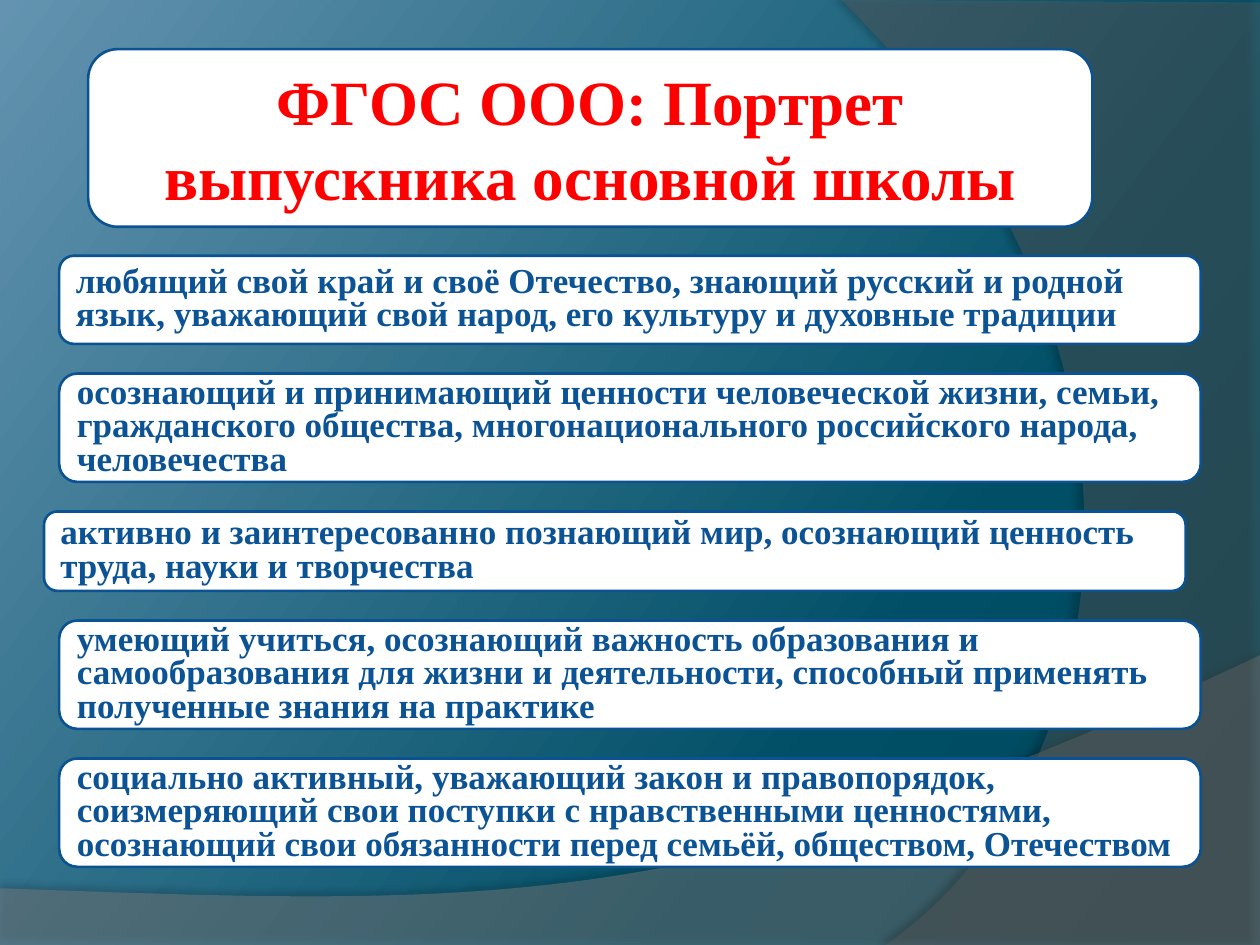
import copy

import lxml.etree
import pptx
import pptx.dml.color
import pptx.enum.shapes
import pptx.enum.text
import pptx.oxml.ns
import pptx.util

Inches = pptx.util.Inches
HUES = {
    "deep": "004355", "teal": "004F66", "sky": "6393B0",
    "wave": "7F7F7F", "arc": "5E5E5E", "shade": "000000",
    "card": "FFFFFF", "edge": "0B5292", "title": "FF0000", "body": "0B5394",
}
TRAITS = [
    (0.47, 0.7, "любящий свой край и своё Отечество, знающий русский и родной язык, "
     "уважающий свой народ, его культуру и духовные традиции"),
    (0.47, 0.86, "осознающий и принимающий ценности человеческой жизни, семьи, "
     "гражданского общества, многонационального российского народа, человечества"),
    (0.35, 0.63, "активно и заинтересованно познающий мир, осознающий ценность труда, "
     "науки и творчества"),
    (0.47, 0.86, "умеющий учиться, осознающий важность образования и самообразования "
     "для жизни и деятельности, способный применять полученные знания на практике"),
    (0.47, 0.86, "социально активный, уважающий закон и правопорядок, соизмеряющий свои "
     "поступки с нравственными ценностями, осознающий свои обязанности перед семьёй, "
     "обществом, Отечеством"),
]
TOP, END = 2.03, 6.88


def rgb(name):
    return pptx.dml.color.RGBColor.from_string(HUES[name])


def sub(node, tag, **attrs):
    return lxml.etree.SubElement(node, pptx.oxml.ns.qn(tag), attrs)


def write(shape, text, size=20, hue="body", align="LEFT", space=None):
    frame = shape.text_frame
    frame.word_wrap = True
    frame.vertical_anchor = pptx.enum.text.MSO_ANCHOR.MIDDLE
    para = frame.paragraphs[0]
    para.alignment = getattr(pptx.enum.text.PP_ALIGN, align)
    para.line_spacing = space
    run = para.add_run()
    run.text = text
    run.font.name = "Times New Roman"
    run.font.size = pptx.util.Pt(size)
    run.font.bold = True
    run.font.color.rgb = rgb(hue)


def curve(a, b, c, d, steps=60):
    def mix(p, q, r, s, t):
        u = 1 - t
        return u**3 * p + 3 * u * u * t * q + 3 * u * t * t * r + t**3 * s

    return [tuple(mix(*axis, i / steps) for axis in zip(a, b, c, d))
            for i in range(steps + 1)]


class Deck:
    """Holds the style and the current slide, and draws each kind of element."""

    def __init__(self, slide):
        self.slide = slide
        self.width = 1.5

    def back(self, stops, angle):
        fill = self.slide.background.fill
        fill.gradient()
        fill.gradient_angle = angle
        first = self.slide.element.xpath(".//a:gs")[0]
        first.addnext(copy.deepcopy(first))
        for stop, (place, hue) in zip(fill.gradient_stops, stops):
            stop.position = place
            stop.color.rgb = rgb(hue)

    def swoosh(self, points, hue, alpha, shade, dist, turn):
        spots = [(Inches(x), Inches(y)) for x, y in points]
        pen = self.slide.shapes.build_freeform(*spots[0])
        pen.add_line_segments(spots[1:], close=True)
        shape = pen.convert_to_shape()
        shape.fill.solid()
        shape.fill.fore_color.rgb = rgb(hue)
        shape.line.fill.background()
        shape.shadow.inherit = False
        tint = shape.element.xpath("./p:spPr/a:solidFill/a:srgbClr")[0]
        sub(tint, "a:alpha", val=str(alpha * 1000))
        glow = sub(shape.element.xpath("./p:spPr/a:effectLst")[0], "a:outerShdw",
                   blurRad=str(pptx.util.Pt(4)), dist=str(pptx.util.Pt(dist)),
                   dir=str(turn * 60000), algn="ctr", rotWithShape="0")
        tint = sub(glow, "a:srgbClr", val=HUES["shade"])
        sub(tint, "a:alpha", val=str(shade * 1000))

    def card(self, left, top, width, height, text, **style):
        kind = pptx.enum.shapes.MSO_SHAPE.FLOWCHART_ALTERNATE_PROCESS
        box = [Inches(n) for n in (left, top, width, height)]
        shape = self.slide.shapes.add_shape(kind, *box)
        shape.shadow.inherit = False
        shape.fill.solid()
        shape.fill.fore_color.rgb = rgb("card")
        shape.line.color.rgb = rgb("edge")
        shape.line.width = pptx.util.Pt(self.width)
        write(shape, text, **style)


def main():
    show = pptx.Presentation()
    show.slide_width, show.slide_height = Inches(10), Inches(7.5)
    deck = Deck(show.slides.add_slide(show.slide_layouts[6]))
    deck.back([(0, "deep"), (0.3, "teal"), (1, "sky")], 143)
    wave = curve((10, 5.2), (5.59, 7.29), (3.91, 7.19), (0, 7.05))
    deck.swoosh([(0, 7.51), (10, 7.51)] + wave, "wave", 45, 35, 3.5, 270)
    arc = curve((7.03, 7.5), (8.91, 6.19), (9.47, 2.75), (6.68, 0))
    deck.swoosh([(10, 0.02), (10, 7.5)] + arc, "arc", 40, 45, 4, 180)
    deck.card(0.7, 0.39, 7.97, 1.41, "ФГОС ООО: Портрет выпускника основной школы",
              size=36, hue="title", align="CENTER")
    gap = (END - TOP - sum(row[1] for row in TRAITS)) / (len(TRAITS) - 1)
    top = TOP
    for left, height, text in TRAITS:
        deck.card(left, top, 9.06, height, text, space=0.8)
        top += height + gap
    show.save("out.pptx")


if __name__ == "__main__":
    main()
